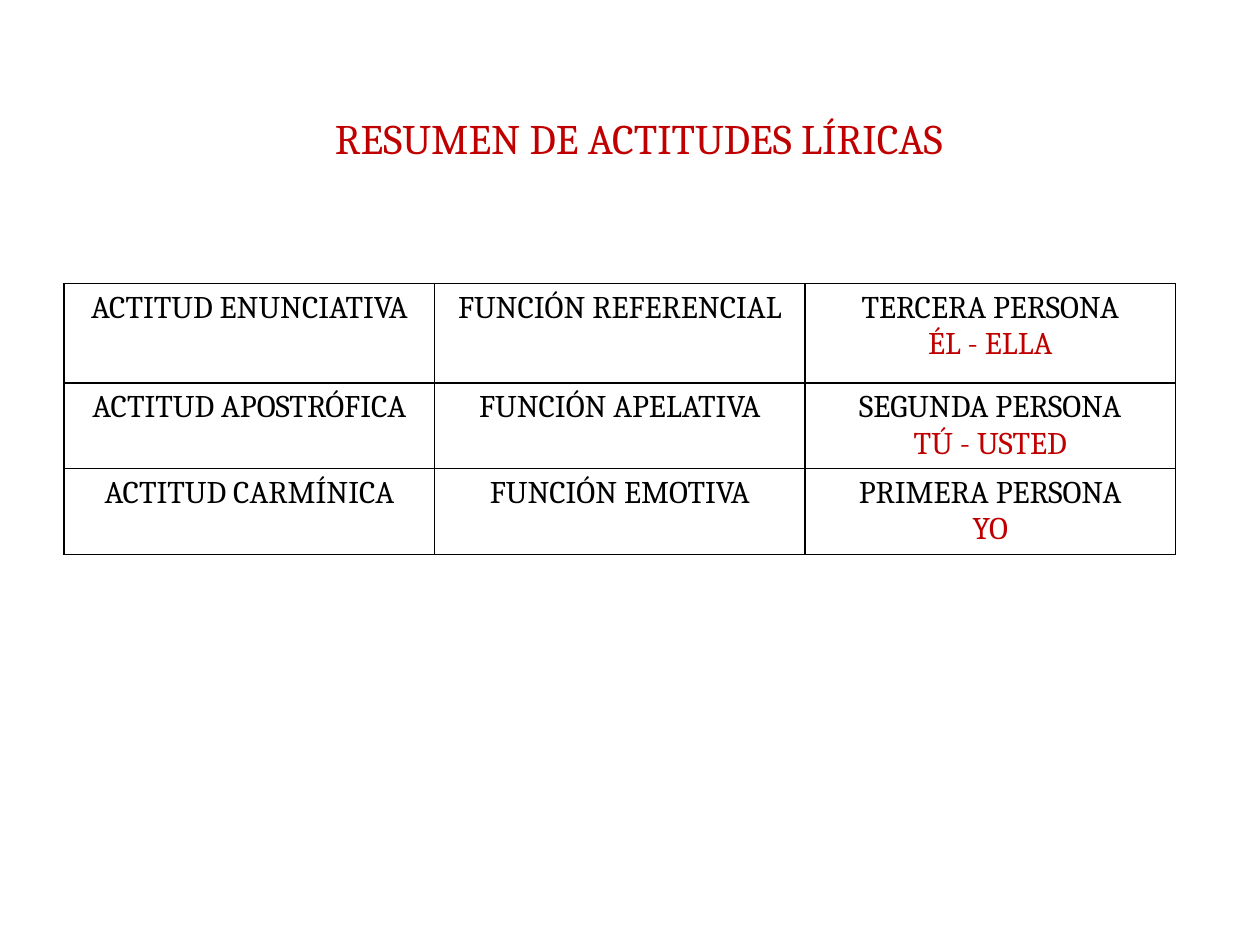
from lxml.etree import SubElement
from pptx import Presentation
from pptx.dml.color import RGBColor
from pptx.enum.text import MSO_AUTO_SIZE as AutoSize, PP_ALIGN as Align
from pptx.oxml.ns import qn
from pptx.util import Inches, Pt

BLACK, RED = "000000", "C00000"


def color(code):
    return RGBColor.from_string(code)


class SlideBuilder:
    font_name = "Cambria"
    border_width = Pt(1)

    def __init__(self, page):
        self.page = page

    def add_text(self, para, text, size, code):
        span = para.add_run()
        span.text = text
        for name, value in {"name": self.font_name, "size": Pt(size)}.items():
            setattr(span.font, name, value)
        span.font.color.rgb = color(code)

    def title(self, text, left, top, width, height):
        box = self.page.shapes.add_textbox(
            Inches(left), Inches(top), Inches(width), Inches(height))
        frame = box.text_frame
        layout = {"word_wrap": False, "auto_size": AutoSize.SHAPE_TO_FIT_TEXT}
        for name, value in layout.items():
            setattr(frame, name, value)
        self.add_text(frame.paragraphs[0], text, 24, RED)

    def border(self, cell):
        properties = cell._tc.get_or_add_tcPr()
        for side in ("lnL", "lnR", "lnT", "lnB"):
            line = SubElement(properties, qn(f"a:{side}"), w=str(self.border_width))
            fill = SubElement(line, qn("a:solidFill"))
            SubElement(fill, qn("a:srgbClr"), val=BLACK)

    def cell(self, cell, lines):
        # The first line is black and the line below it red
        frame = cell.text_frame
        for index, (text, code) in enumerate(zip(lines, (BLACK, RED))):
            para = frame.add_paragraph() if index else frame.paragraphs[0]
            para.alignment = Align.CENTER
            self.add_text(para, text, 18, code)
        self.border(cell)
        cell.fill.background()

    def table(self, rows, left, top, column_width, heights):
        columns = len(rows[0])
        table = self.page.shapes.add_table(
            len(rows), columns, Inches(left), Inches(top),
            Inches(column_width * columns), Inches(sum(heights))).table
        for name in ("first_row", "horz_banding"):
            setattr(table, name, False)
        for column in table.columns:
            column.width = Inches(column_width)
        for row, height, texts in zip(table.rows, heights, rows):
            row.height = Inches(height)
            for cell, text in zip(row.cells, texts):
                self.cell(cell, text.split("\n"))


def main():
    deck = Presentation()
    deck.slide_width, deck.slide_height = Inches(10), Inches(7.5)
    builder = SlideBuilder(deck.slides.add_slide(deck.slide_layouts[6]))

    # Summary table: attitude, function, grammatical person
    attitudes = [
        ("ACTITUD ENUNCIATIVA", "FUNCIÓN REFERENCIAL", "TERCERA PERSONA\nÉL - ELLA"),
        ("ACTITUD APOSTRÓFICA", "FUNCIÓN APELATIVA", "SEGUNDA PERSONA\nTÚ - USTED"),
        ("ACTITUD CARMÍNICA", "FUNCIÓN EMOTIVA", "PRIMERA PERSONA\nYO"),
    ]
    builder.table(attitudes, 0.51, 2.25, 2.94, (0.79, 0.68, 0.68))

    # Title
    builder.title("RESUMEN DE ACTITUDES LÍRICAS", 2.56, 0.84, 5.19, 0.5)

    deck.save("out.pptx")


if __name__ == "__main__":
    main()
